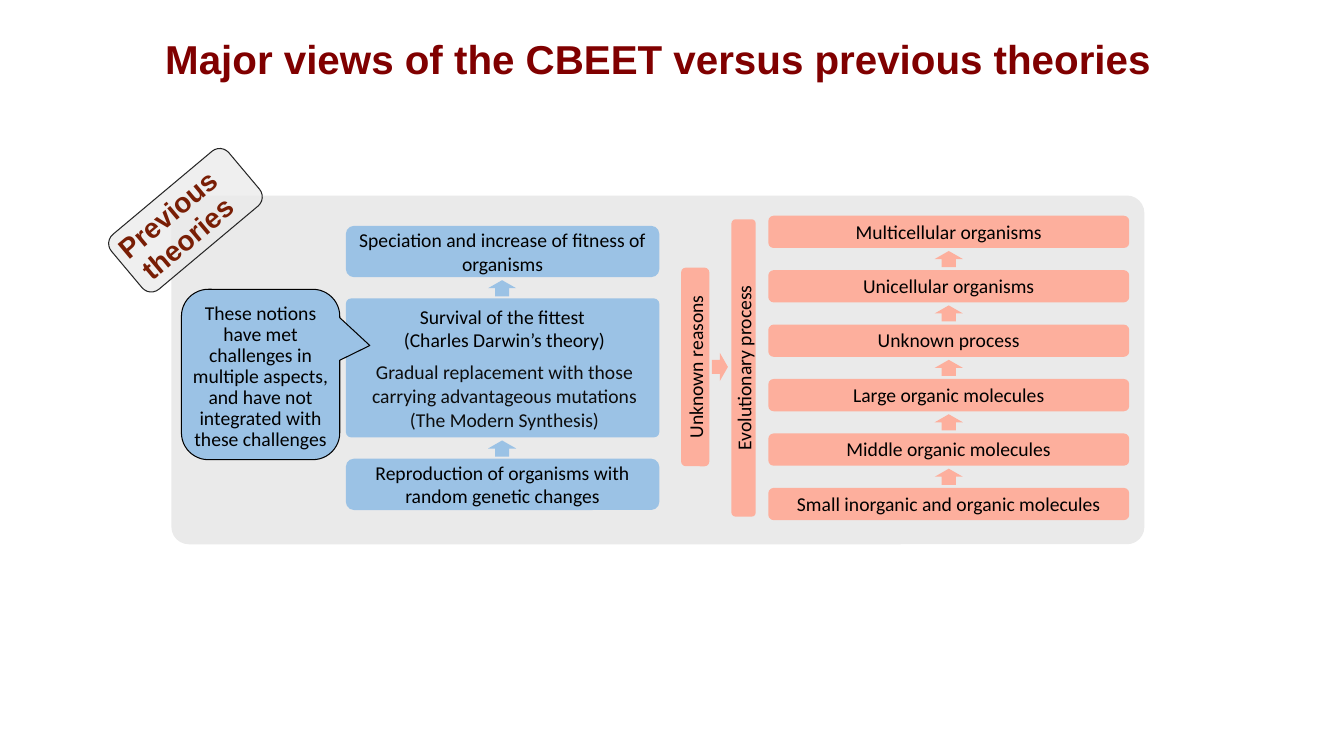
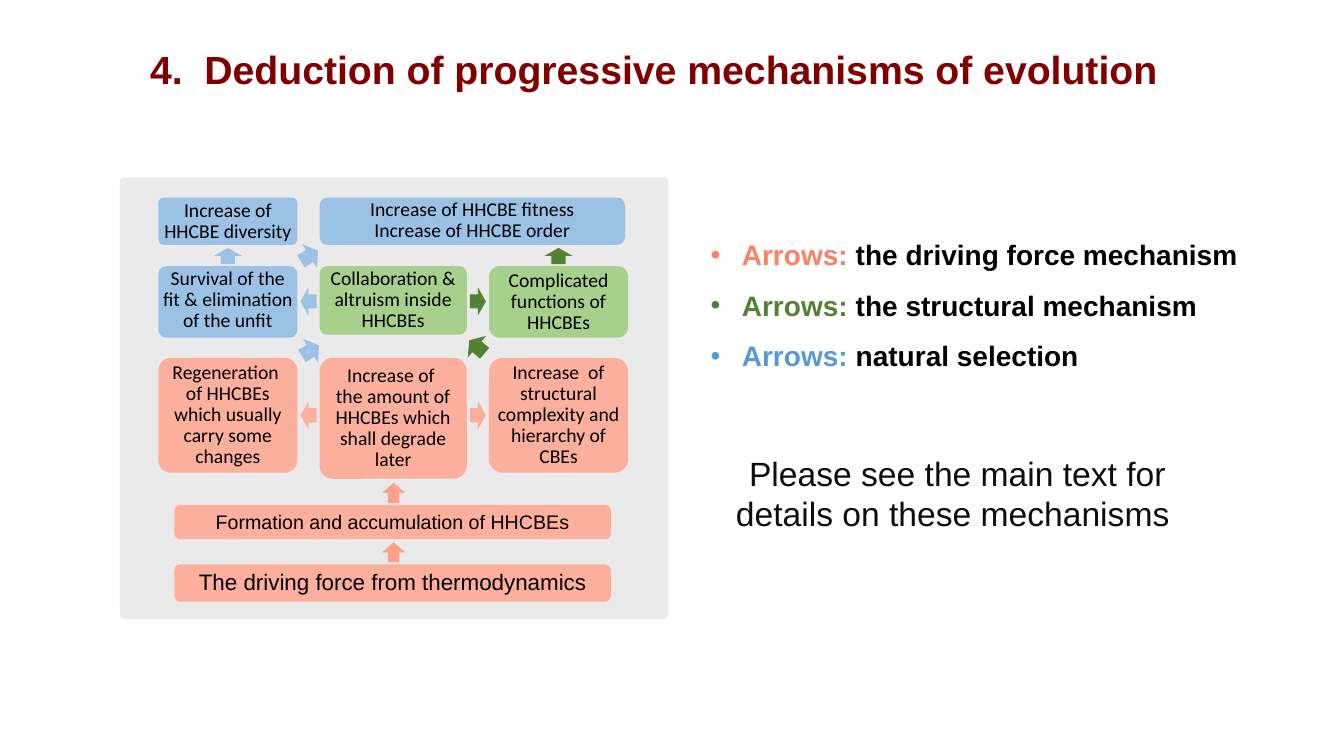
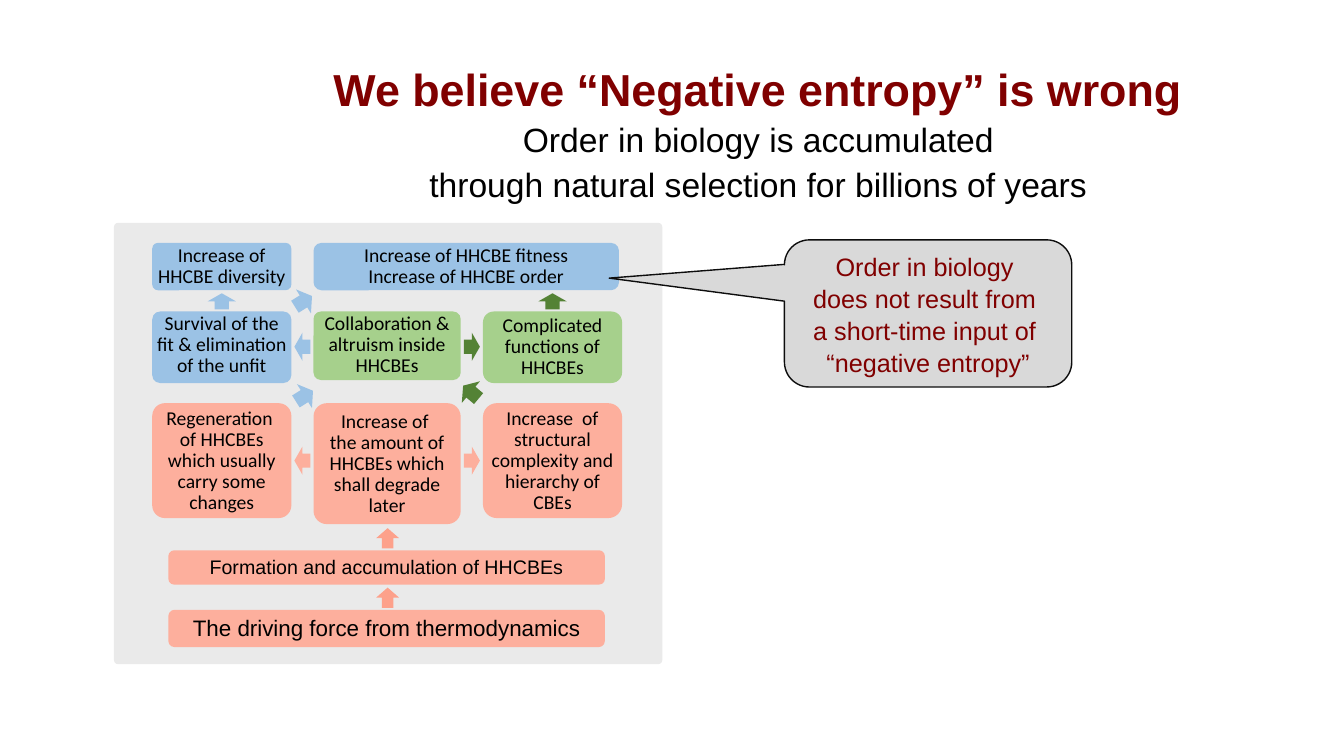
from lxml.etree import SubElement
from pptx import Presentation
from pptx.dml.color import RGBColor as Rgb
from pptx.enum.shapes import MSO_SHAPE as Kind
from pptx.enum.text import MSO_ANCHOR as Anchor, PP_ALIGN as Align
from pptx.oxml.ns import qn
from pptx.util import Pt

PX = 9144  # EMU in one px, 100 px to the inch

WHITE = Rgb(0xFF, 0xFF, 0xFF)
BLACK = Rgb(0, 0, 0)
INK = Rgb(0x0D, 0x0D, 0x0D)
EDGE = Rgb(0x26, 0x26, 0x26)
MAROON = Rgb(0x80, 0, 0)
RUST = Rgb(0x79, 0x1E, 0x05)
PANEL = Rgb(0xEA, 0xEA, 0xEA)
GREY = Rgb(0xD9, 0xD9, 0xD9)
PINK = Rgb(0xFD, 0xAF, 0x9D)
CORAL = Rgb(0xFD, 0xA1, 0x8B)
SALMON = Rgb(0xFC, 0x81, 0x64)
BLUE = Rgb(0x9B, 0xC2, 0xE5)
SKY = Rgb(0x58, 0x99, 0xD4)
LIME = Rgb(0xA6, 0xD0, 0x8C)
GREEN = Rgb(0x54, 0x82, 0x35)


# Shared helpers
def style(run, size, color, font="Arial", bold=False):
    run.font.name = font
    run.font.size = Pt(size)
    run.font.bold = bold
    run.font.color.rgb = color


def write(shape, text, size=14, color=BLACK, font="Calibri", bold=False,
          lead=None, pad=(0, 0, 0, 0), mid=True, align=Align.CENTER):
    """Fill a text frame; pad is left, top, right, bottom; lead is in points."""
    frame = shape.text_frame
    frame.text = text
    frame.word_wrap = True
    frame.vertical_anchor = Anchor.MIDDLE if mid else Anchor.TOP
    (frame.margin_left, frame.margin_top,
     frame.margin_right, frame.margin_bottom) = [p * PX for p in pad]
    for para in frame.paragraphs:
        para.alignment = align
        if lead:
            para.line_spacing = Pt(lead)
        for run in para.runs:
            style(run, size, color, font, bold)


def part(slide, x, y, w, h, fill, text="", kind=Kind.ROUNDED_RECTANGLE,
         adj=(), line=None, rot=0, **look):
    """Add a flat shape; line is a colour and a width in points."""
    shape = slide.shapes.add_shape(kind, x * PX, y * PX, w * PX, h * PX)
    shape.shadow.inherit = False
    shape.rotation = rot
    shape.fill.solid()
    shape.fill.fore_color.rgb = fill
    if line:
        shape.line.color.rgb, shape.line.width = line[0], Pt(line[1])
    else:
        shape.line.fill.background()
    for i, val in enumerate(adj):
        shape.adjustments[i] = val
    if text:
        write(shape, text, **look)
    return shape


def arrow(slide, cx, cy, fill, way="up", size=(28, 16), rot=0):
    """Add a block arrow centred on a point."""
    kind = {"up": Kind.UP_ARROW, "left": Kind.LEFT_ARROW,
            "right": Kind.RIGHT_ARROW}[way]
    w, h = size if way == "up" or rot else size[::-1]
    part(slide, cx - w // 2, cy - h // 2, w, h, fill, kind=kind, rot=rot)


def words(slide, x, y, w, h, text, **look):
    box = slide.shapes.add_textbox(x * PX, y * PX, w * PX, h * PX)
    write(box, text, font="Arial", pad=(10, 5, 10, 5), **look)
    return box.text_frame


def title(slide, x, y, w, h, text, size, lead=0.9, align=Align.LEFT):
    frame = words(slide, x, y, w, h, "", align=align)
    para = frame.paragraphs[0]
    para.text = text
    para.line_spacing = lead
    for run in para.runs:
        style(run, size, MAROON, bold=True)
    return para


# Slide 1 regions
def fitness(slide, x, y):
    """Blue column: reproduction, selection, speciation."""
    w, mid = 311, 155
    for dy, text in (
            (0, "Speciation and increase of fitness of organisms"),
            (231, "Reproduction of organisms with random genetic changes")):
        part(slide, x, y + dy, w, 51, BLUE, text, adj=[0.16], pad=(4, 4, 4, 4))
    core = part(slide, x, y + 72, w, 138, BLUE,
                "Survival of the fittest \n(Charles Darwin’s theory)\n"
                "Gradual replacement with those carrying advantageous mutations\n"
                "(The Modern Synthesis)", adj=[0.04], pad=(12, 0, 8, 0))
    paras = core.text_frame.paragraphs
    paras[2].space_before = Pt(6)
    for para in paras[2:]:
        para.runs[0].font.color.rgb = INK
    for dy in (62, 221):
        arrow(slide, x + mid, y + dy, BLUE)


def ladder(slide, x, y):
    """Pink column of steps, joined by upward arrows."""
    w, h, step = 358, 32, 54
    steps = ("Multicellular organisms", "Unicellular organisms",
             "Unknown process", "Large organic molecules",
             "Middle organic molecules",
             "Small inorganic and organic molecules")
    for i, text in enumerate(steps):
        top = y + i * step
        part(slide, x, top, w, h, PINK, text, lead=16, pad=(8, 0, 8, 0))
        if i:
            arrow(slide, x + w // 2, top - (step - h) // 2, PINK)


def bars(slide, x, y):
    """Two upright bars with an arrow between them."""
    part(slide, x - 85, y + 135, 197, 28, PINK, "Unknown reasons",
         rot=270, pad=(0, 4, 0, 4))
    part(slide, x - 86, y + 138, 295, 24, PINK, "Evolutionary process",
         rot=270, pad=(8, 0, 8, 0))
    arrow(slide, x + 38, y + 149, PINK, "right")


def theories(slide, x, y):
    part(slide, x, y, 965, 346, PANEL, adj=[0.05])
    bars(slide, x + 506, y + 21)
    ladder(slide, x + 592, y + 20)
    fitness(slide, x + 173, y + 30)
    part(slide, x + 10, y + 93, 157, 169, BLUE,
         "These notions have met challenges in multiple aspects, "
         "and have not integrated with these challenges",
         kind=Kind.ROUNDED_RECTANGULAR_CALLOUT, adj=[0.69, -0.17, 0.17],
         line=(BLACK, 0.75), lead=15, pad=(0, 12, 0, 8))
    # Tilted, partly clear tag on the corner
    tag = part(slide, x - 62, y - 11, 152, 71, PANEL, "Previous theories",
               rot=320, line=(EDGE, 0.75), size=20, color=RUST, font="Arial",
               bold=True, lead=22, pad=(0, 4, 20, 4))
    tint = tag.fill._xPr.find(qn("a:solidFill"))[0]
    SubElement(tint, qn("a:alpha"), val="74000")


# Mechanism chart of slides 2 and 3
def web(slide, x, y):
    part(slide, x, y, 544, 438, PANEL, adj=[0.01])
    cols = ((38, 138), (198, 146), (366, 138))
    left, mid, right = [dx + w // 2 for dx, w in cols]
    gap1, gap2 = 187, 355
    top, body, base = 20, 88, 179

    # Base bars
    for dy, h, text, size, lead in (
            (384, 37, "The driving force from thermodynamics", 16, 18),
            (325, 34, "Formation and accumulation of HHCBEs", 14, 16)):
        part(slide, x + 54, y + dy, 433, h, PINK, text, size=size,
             font="Arial", lead=lead, pad=(4, 4, 4, 4), mid=False)
    for dy in (372, 313):
        arrow(slide, x + mid, y + dy, CORAL, size=(23, 20))

    # Boxes: column, top, height, fill, corner, inset, centred, text
    cells = (
        (0, body, 71, BLUE, 0.11, 0, False,
         "Survival of the fit & elimination of the unfit"),
        (1, body, 68, LIME, 0.11, 0, False,
         "Collaboration & altruism inside HHCBEs"),
        (2, body, 71, LIME, 0.15, 0, True, "Complicated functions of HHCBEs"),
        (0, base, 114, PINK, 0.11, 4, True,
         "Regeneration \nof HHCBEs which usually carry some\nchanges"),
        (1, base, 120, PINK, 0.11, 4, False,
         "Increase of \nthe amount of HHCBEs which shall degrade later"),
        (2, base, 114, PINK, 0.12, 4, True,
         "Increase  of structural complexity and hierarchy of CBEs"))
    for col, dy, h, fill, adj, pad, centred, text in cells:
        dx, w = cols[col]
        part(slide, x + dx, y + dy, w, h, fill, text, adj=[adj], lead=15,
             pad=(pad,) * 4, mid=centred)
    part(slide, x + cols[0][0], y + top, 138, 47, BLUE,
         "Increase of HHCBE diversity", adj=[0.12], lead=15, pad=(0, 4, 0, 4))
    part(slide, x + cols[1][0], y + top, 303, 47, BLUE,
         "Increase of HHCBE fitness\nIncrease of HHCBE order",
         lead=15, pad=(4, 0, 4, 0), mid=False)

    # Arrows between the boxes
    for cx, cy, fill, way in (
            (gap1, 123, BLUE, "left"), (gap2, 123, GREEN, "right"),
            (gap1, 236, PINK, "left"), (gap2, 236, PINK, "right"),
            (left, 78, BLUE, "up"), (right, 78, GREEN, "up")):
        arrow(slide, x + cx, y + cy, fill, way)
    for cx, cy, fill, rot in ((gap1 + 1, 78, BLUE, 328),
                              (gap1 + 2, 172, BLUE, 328),
                              (gap2 - 1, 168, GREEN, 220)):
        arrow(slide, x + cx, y + cy, fill, "right", (20, 28), rot)


# Slide 2 legend
def legend(slide, x, y):
    rows = ((SALMON, "the driving force mechanism"),
            (GREEN, "the structural mechanism"), (SKY, "natural selection"))
    frame = words(slide, x, y, 577, 145, "", mid=False)
    for i, (color, text) in enumerate(rows):
        para = frame.add_paragraph() if i else frame.paragraphs[0]
        para.alignment = Align.LEFT
        para.space_before = Pt(12)
        for piece, tint in (("Arrows: ", color), (text, BLACK)):
            run = para.add_run()
            run.text = piece
            style(run, 20, tint, bold=True)
        props = para._p.get_or_add_pPr()
        props.set("marL", str(31 * PX))
        props.set("indent", str(-31 * PX))
        SubElement(props, qn("a:buFont"), typeface="Arial")
        SubElement(props, qn("a:buChar"), char="•")


# Slides
def views(slide):
    title(slide, 154, 23, 1075, 75,
          "Major views of the CBEET versus previous theories", 28.8)
    theories(slide, 170, 194)


def causes(slide):
    title(slide, 139, 5, 1056, 132,
          "4.  Deduction of progressive mechanisms of evolution", 28)
    legend(slide, 695, 231)
    web(slide, 119, 176)
    words(slide, 719, 444, 461, 91,
          "Please see the main text for details on these mechanisms ",
          size=24, color=INK, mid=False)


def order(slide):
    para = title(slide, 177, 25, 1150, 208,
                 "We believe “Negative entropy” is wrong\n"
                 "Order in biology is accumulated\n"
                 "through natural selection for billions of years",
                 32, 1.1, Align.CENTER)
    para.space_before = Pt(6)
    for run in para.runs[1:]:
        style(run, 24, BLACK)
    web(slide, 113, 221)
    part(slide, 778, 238, 285, 146, GREY,
         "Order in biology \ndoes not result from \n"
         "a short-time input of \n“negative entropy”",
         kind=Kind.ROUNDED_RECTANGULAR_CALLOUT, adj=[-1.11, -0.24, 0.17],
         line=(INK, 1), size=18, color=MAROON, font="Arial", lead=23,
         pad=(0, 5, 0, 5))


def main():
    deck = Presentation()
    deck.slide_width, deck.slide_height = 1333 * PX, 750 * PX
    blank = deck.slide_layouts[6]
    for build in (views, causes, order):
        slide = deck.slides.add_slide(blank)
        slide.background.fill.solid()
        slide.background.fill.fore_color.rgb = WHITE
        build(slide)
    deck.save("out.pptx")


if __name__ == "__main__":
    main()
